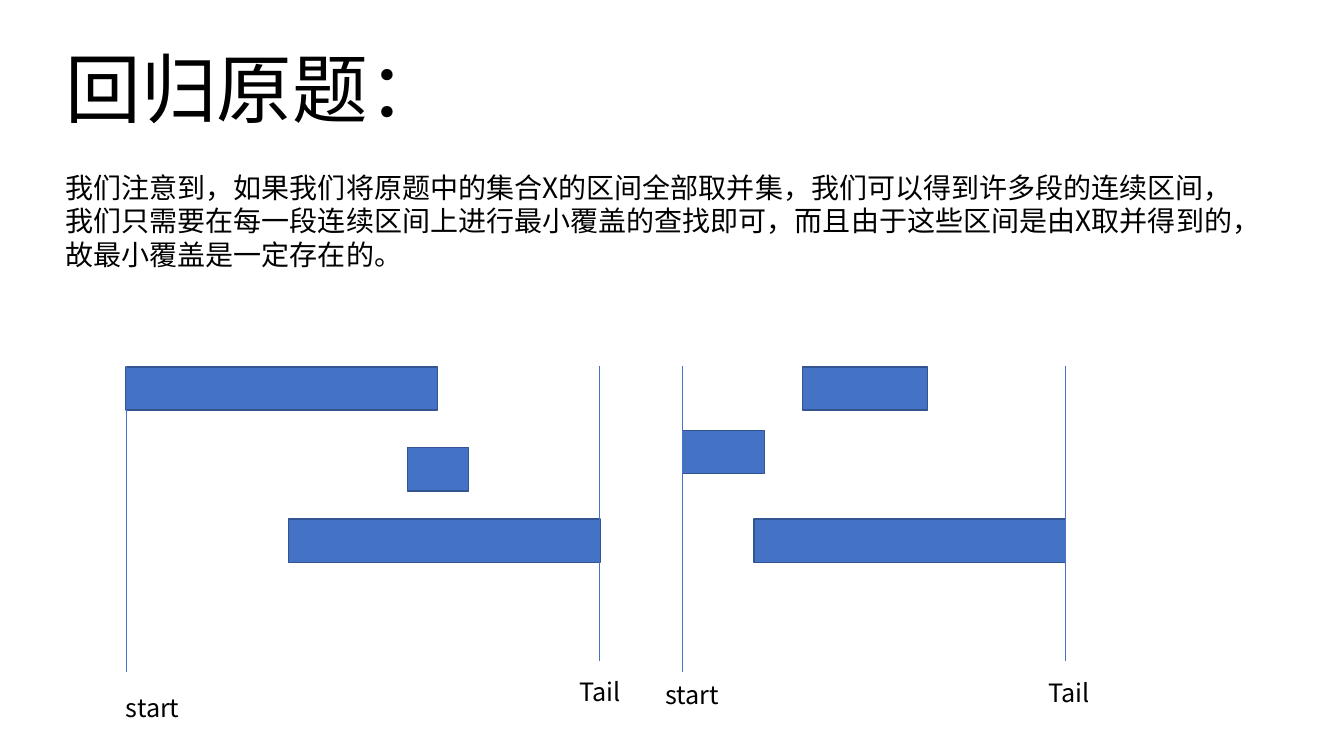
"""Build a slide on minimal covers of two unions of intervals."""
from pptx import Presentation
from pptx.dml.color import RGBColor
from pptx.enum.shapes import MSO_CONNECTOR, MSO_SHAPE
from pptx.enum.text import MSO_ANCHOR, MSO_AUTO_SIZE, PP_ALIGN
from pptx.oxml.ns import qn
from pptx.util import Inches, Pt

FONT = "Noto Sans CJK SC"
BLUE, EDGE, INK = "4472C4", "325491", "000000"
TITLE = "回归原题："
BODY = ("我们注意到，如果我们将原题中的集合X的区间全部取并集，我们可以得到许多段的连续区间，"
        "我们只需要在每一段连续区间上进行最小覆盖的查找即可，而且由于这些区间是由X取并得到的，"
        "故最小覆盖是一定存在的。")
TOP, HIGH = 3.63, 0.43
ENDS = {"start": (6.67, 0.95), "Tail": (6.56, 0.79)}
GROUPS = [
    {"bars": [(1.25, 3.64, 3.09), (4.04, 4.44, 0.61), (2.86, 5.15, 3.09)],
     "marks": [("start", 1.25, 1.15, 6.82), ("Tail", 5.94, 5.65, 6.66)]},
    {"bars": [(7.96, 3.64, 1.24), (6.77, 4.27, 0.81), (7.48, 5.15, 3.09)],
     "marks": [("start", 6.77, 6.5, 6.69), ("Tail", 10.57, 10.3, 6.67)]},
]


def color(code):
    return RGBColor.from_string(code)


def write(shape, text, box, size=18):
    shape.left, shape.top, shape.width, shape.height = map(Inches, box)
    frame = shape.text_frame
    frame.word_wrap = True
    frame.auto_size = MSO_AUTO_SIZE.NONE
    frame.vertical_anchor = MSO_ANCHOR.TOP
    par = frame.paragraphs[0]
    par.alignment = PP_ALIGN.LEFT
    par.space_before = Pt(0)
    par.line_spacing = Pt(size * 1.2)
    props = par._p.get_or_add_pPr()
    props.set("marL", "0")
    props.set("indent", "0")
    props.append(props.makeelement(qn("a:buNone"), {}))
    run = par.add_run()
    run.text = text
    run.font.name = FONT
    run.font.size = Pt(size)
    run.font.color.rgb = color(INK)
    style = run._r.get_or_add_rPr()
    style.append(style.makeelement(qn("a:ea"), {"typeface": FONT}))


def draw_bar(shapes, left, top, width):
    bar = shapes.add_shape(MSO_SHAPE.RECTANGLE, *map(Inches, (left, top, width, HIGH)))
    bar.shadow.inherit = False
    bar.fill.solid()
    bar.fill.fore_color.rgb = color(BLUE)
    bar.line.color.rgb = color(EDGE)
    bar.line.width = Pt(1)


def draw_mark(shapes, name, x, left, top):
    end, width = ENDS[name]
    line = shapes.add_connector(MSO_CONNECTOR.STRAIGHT, *map(Inches, (x, TOP, x, end)))
    line.line.color.rgb = color(BLUE)
    line.line.width = Pt(0.5)
    props = line._element.spPr
    props.append(props.makeelement(qn("a:effectLst"), {}))
    write(shapes.add_textbox(0, 0, 0, 0), name, (left, top, width, 0.4))


def main():
    deck = Presentation()
    deck.slide_width, deck.slide_height = Inches(13.33), Inches(7.5)
    slide = deck.slides.add_slide(deck.slide_layouts[1])
    shapes = slide.shapes
    write(shapes.title, TITLE, (0.55, 0.37, 7.17, 1.01), size=54)
    write(slide.placeholders[1], BODY, (0.55, 1.64, 11.82, 1.11), size=20)
    for group in GROUPS:
        for bar in group["bars"]:
            draw_bar(shapes, *bar)
        for mark in group["marks"]:
            draw_mark(shapes, *mark)
    deck.save("out.pptx")


if __name__ == "__main__":
    main()
